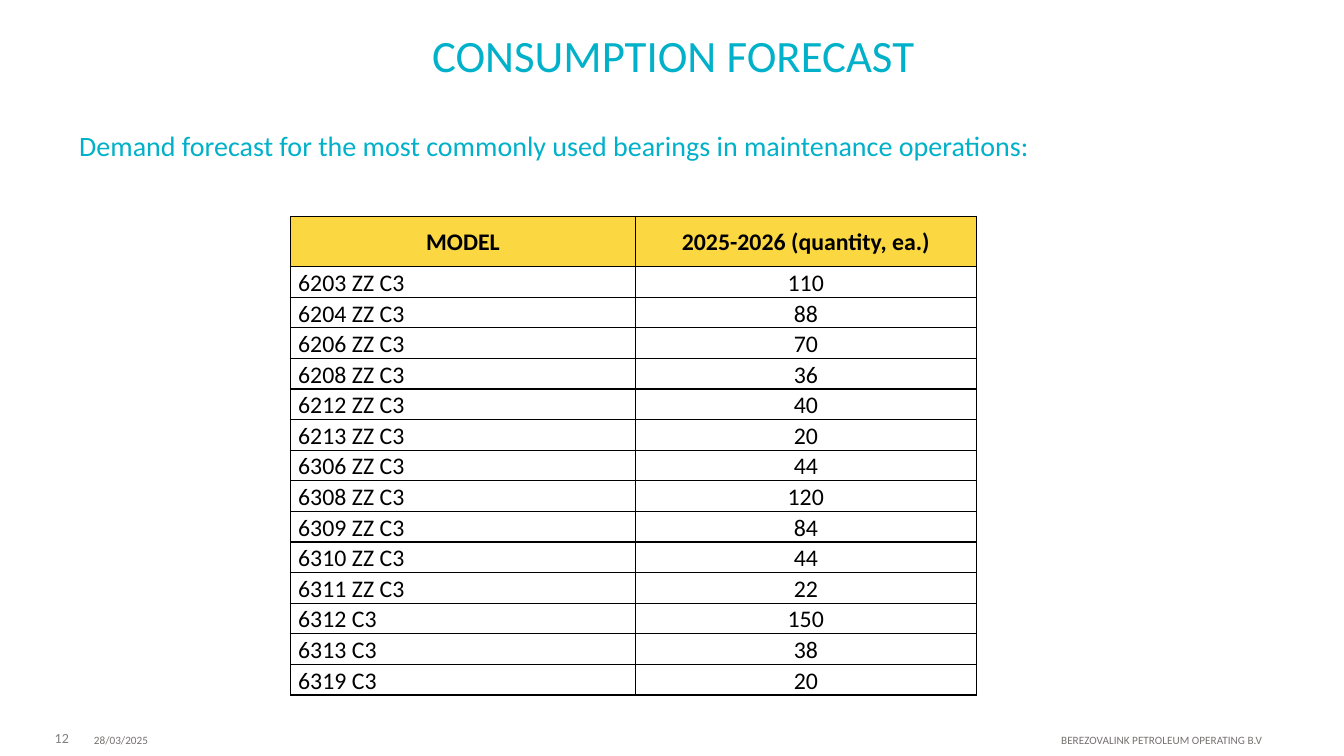
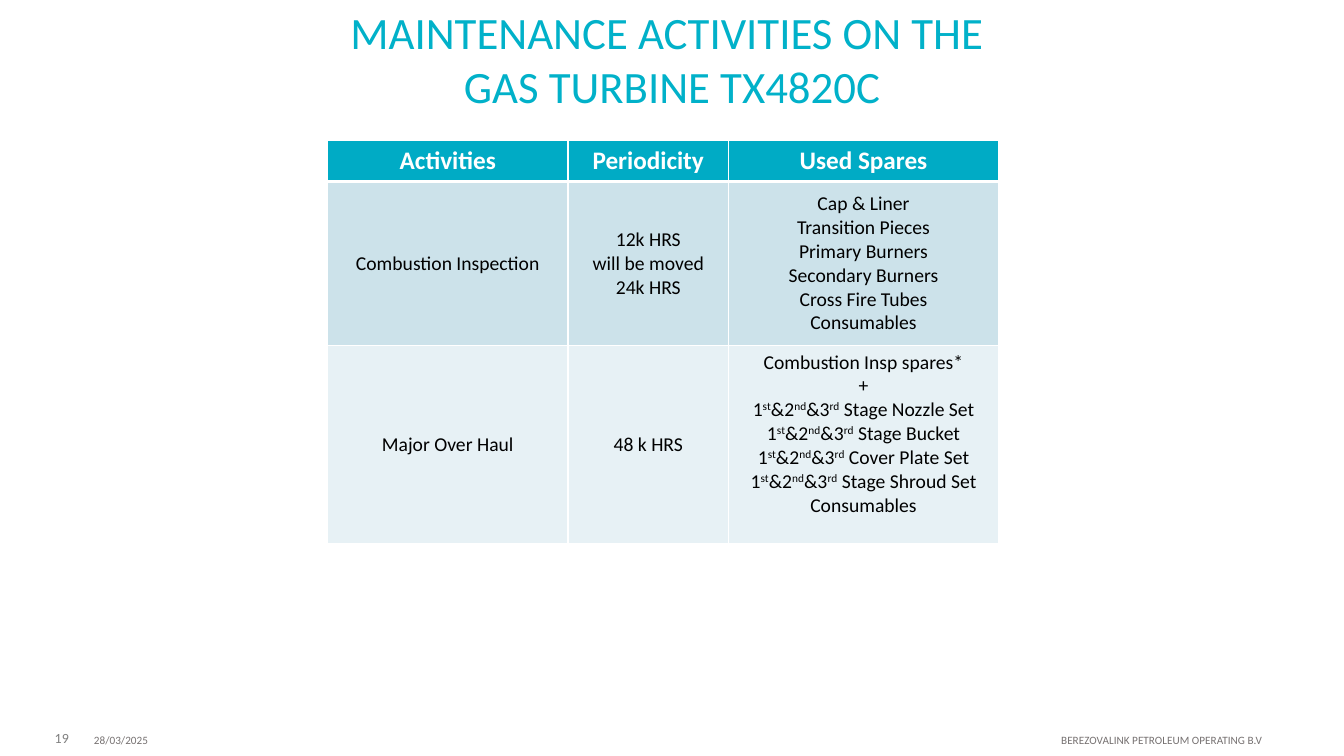
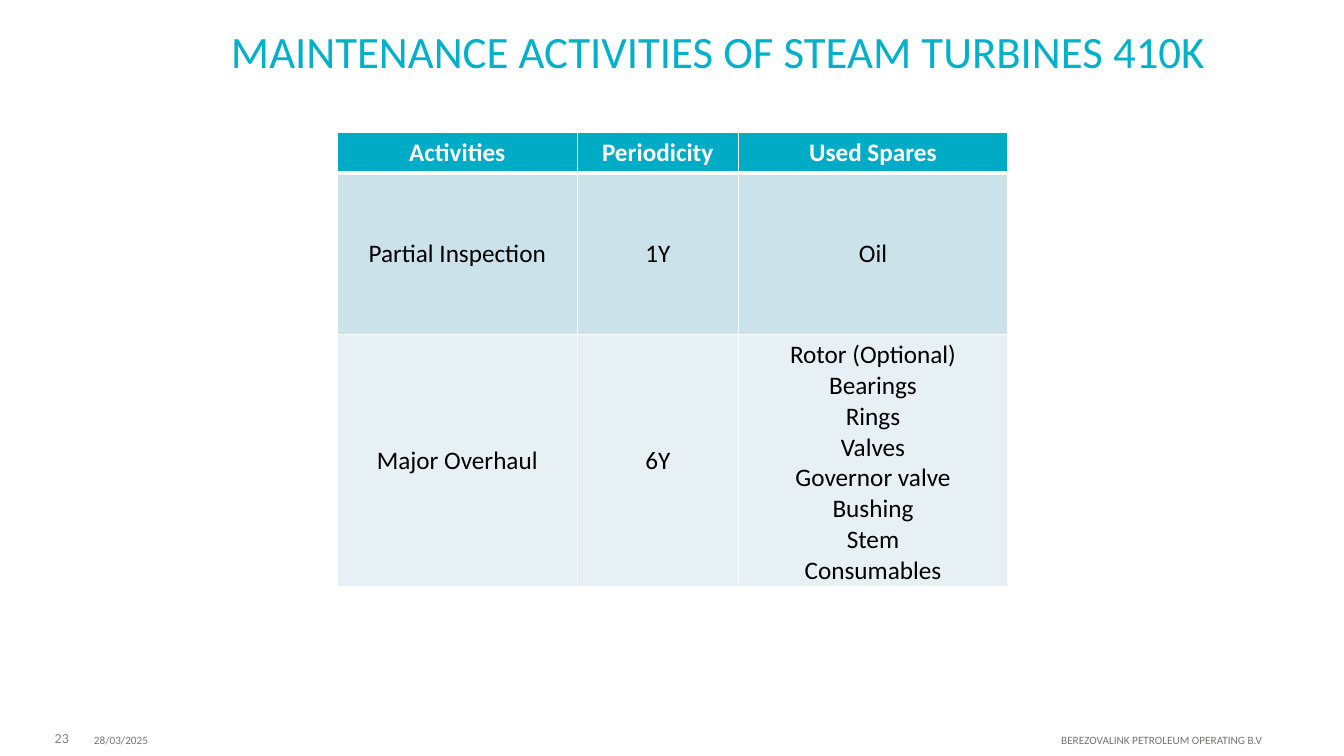
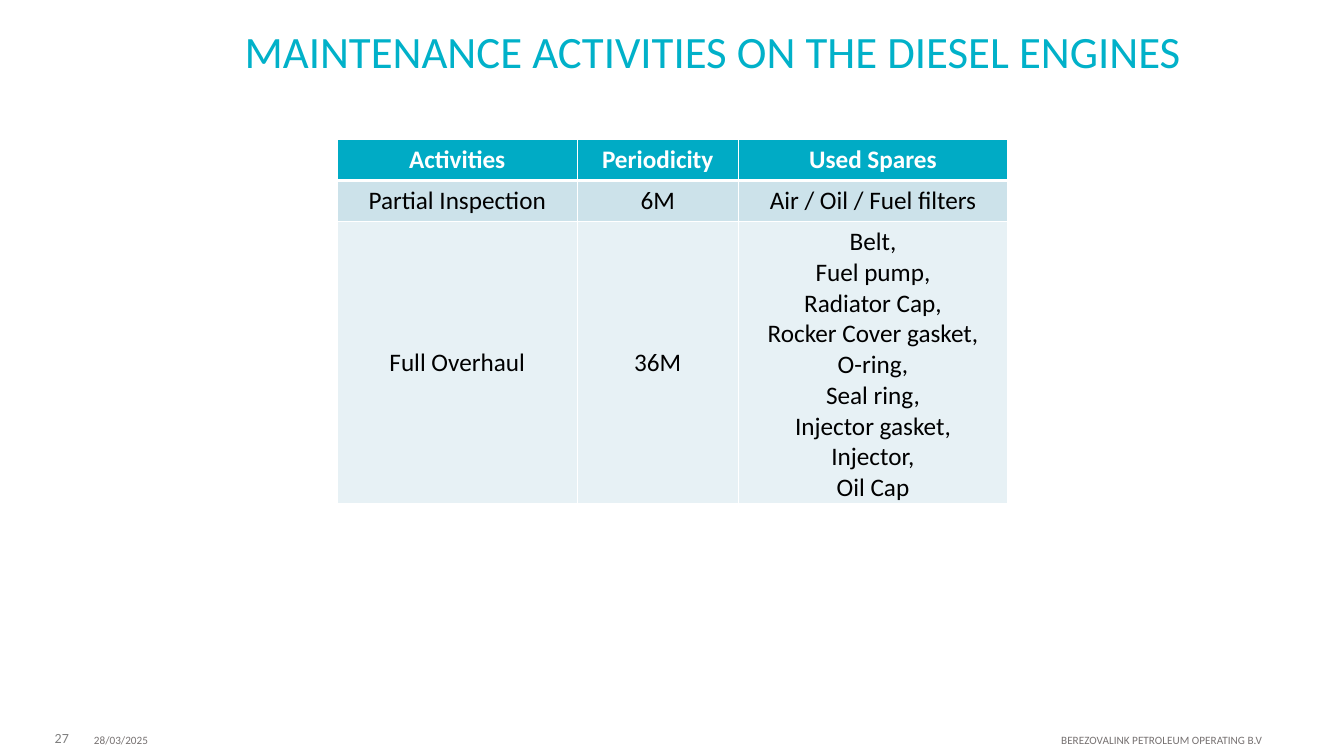
"""Build four slides on bearing demand and turbine and engine maintenance."""
from dataclasses import dataclass

from lxml import etree
from pptx import Presentation
from pptx import util as u
from pptx.dml.color import RGBColor
from pptx.enum import text
from pptx.oxml import ns

PX = 9525
ALIGN, ANCHOR = text.PP_ALIGN, text.MSO_ANCHOR


@dataclass(frozen=True)
class Theme:
    font: str = "Calibri"
    title: str = "01B1C9"
    header: str = "00ABC5"
    bands: tuple = ("CCE2EA", "E7F1F5")
    model_header: str = "FBD741"
    black: str = "000000"
    white: str = "FFFFFF"
    number: str = "808080"
    footer: str = "767171"
    title_pt: int = 32
    lead_pt: int = 20
    table_pt: int = 18
    model_pt: int = 17
    detail_pt: int = 14
    number_pt: int = 10
    footer_pt: int = 8


T = Theme()


def write(tf, lines, size, color, align=ALIGN.CENTER, bold=False, spacing=None, tab=None):
    """Fill a text frame, raising the parts of a line between ^ marks."""
    tf.word_wrap = True
    for i, line in enumerate(lines):
        p = tf.paragraphs[0] if i == 0 else tf.add_paragraph()
        p.alignment = align
        if spacing:
            p.line_spacing = spacing
        if tab:
            tabs = etree.SubElement(p._p.get_or_add_pPr(), ns.qn("a:tabLst"))
            etree.SubElement(tabs, ns.qn("a:tab"), pos=str(tab * PX), algn="r")
        p.font.name = T.font
        p.font.size = u.Pt(size)
        p.font.bold = bold
        p.font.color.rgb = RGBColor.from_string(color)
        for k, part in enumerate(line.split("^")):
            r = p.add_run()
            r.text = part
            if k % 2:
                r._r.get_or_add_rPr().set("baseline", "30000")


def add_table(s, left, top, widths, heights, border, header_rule):
    """Add a table with plain borders and a heavier or equal rule under its header."""
    box = (v * PX for v in (left, top, sum(widths), sum(heights)))
    table = s.shapes.add_table(len(heights), len(widths), *box).table
    table.first_row = table.horz_banding = False
    for column, width in zip(table.columns, widths):
        column.width = width * PX
    for i, (row, height) in enumerate(zip(table.rows, heights)):
        row.height = height * PX
        for cell in row.cells:
            cell.vertical_anchor = ANCHOR.MIDDLE
            for side in "LRTB":
                heavy = (i, side) in ((0, "B"), (1, "T"))
                ln = etree.SubElement(cell._tc.get_or_add_tcPr(), ns.qn("a:ln" + side),
                                      w=str(u.Pt(header_rule if heavy else 1)))
                fill = etree.SubElement(ln, ns.qn("a:solidFill"))
                etree.SubElement(fill, ns.qn("a:srgbClr"), val=border)
    return table


prs = Presentation()
prs.slide_width, prs.slide_height = 1280 * PX, 720 * PX

TITLES = [
    (12, 1, 22, 69, 0, ["CONSUMPTION FORECAST"]),
    (19, 0, 0, 87, 0, ["MAINTENANCE ACTIVITIES ON THE ", "GAS TURBINE TX4820C"]),
    (23, 1, 18, 87, 86, ["MAINTENANCE ACTIVITIES OF STEAM TURBINES 410K"]),
    (27, 1, 18, 72, 76, ["MAINTENANCE ACTIVITIES ON THE DIESEL ENGINES"]),
]
slides = []
for number, left, top, height, indent, title in TITLES:
    s = prs.slides.add_slide(prs.slide_layouts[6])
    slides.append(s)
    tf = s.shapes.add_textbox(11 * PX, 685 * PX, 64 * PX, 35 * PX).text_frame
    tf.vertical_anchor = ANCHOR.MIDDLE
    write(tf, [str(number)], T.number_pt, T.number, ALIGN.RIGHT)
    tf = s.shapes.add_textbox(left * PX, top * PX, 1280 * PX, height * PX).text_frame
    tf.margin_left = (10 + indent) * PX
    write(tf, title, T.title_pt, T.title)
    tf = s.shapes.add_textbox(80 * PX, 694 * PX, 1200 * PX, 27 * PX).text_frame
    write(tf, ["28/03/2025\tBEREZOVALINK PETROLEUM OPERATING B.V"],
          T.footer_pt, T.footer, ALIGN.LEFT, tab=1113)

s = slides[0]
tf = s.shapes.add_textbox(66 * PX, 115 * PX, 1174 * PX, 69 * PX).text_frame
write(tf, ["Demand forecast for the most commonly used bearings in maintenance operations:"],
      T.lead_pt, T.title, ALIGN.JUSTIFY, spacing=1.07)

DEMAND = [
    ("MODEL", "2025-2026 (quantity, ea.)"),
    ("6203 ZZ C3", "110"), ("6204 ZZ C3", "88"), ("6206 ZZ C3", "70"),
    ("6208 ZZ C3", "36"), ("6212 ZZ C3", "40"), ("6213 ZZ C3", "20"),
    ("6306 ZZ C3", "44"), ("6308 ZZ C3", "120"), ("6309 ZZ C3", "84"),
    ("6310 ZZ C3", "44"), ("6311 ZZ C3", "22"), ("6312 C3", "150"),
    ("6313 C3", "38"), ("6319 C3", "20"),
]
heights = [48] + [29] * (len(DEMAND) - 1)
table = add_table(s, 277, 206, (328, 325), heights, T.black, 1)
for i, values in enumerate(DEMAND):
    for j, value in enumerate(values):
        cell = table.cell(i, j)
        cell.margin_left = cell.margin_right = 7 * PX
        cell.margin_top = cell.margin_bottom = 0
        if i == 0:
            cell.fill.solid()
            cell.fill.fore_color.rgb = RGBColor.from_string(T.model_header)
        else:
            cell.vertical_anchor = ANCHOR.TOP
            cell.fill.background()
        align = ALIGN.LEFT if i and j == 0 else ALIGN.CENTER
        write(cell.text_frame, [value], T.model_pt, T.black, align, i == 0, 1.07)

STAGES = "1^st^&2^nd^&3^rd^ "
PLANS = [
    (312, 134, (39, 156, 189), T.detail_pt, [
        (["Combustion Inspection"], ["12k HRS", "will be moved 24k HRS"],
         ["Cap & Liner", "Transition Pieces", "Primary Burners", "Secondary Burners",
          "Cross Fire Tubes", "Consumables"]),
        (["Major Over Haul"], ["48 k HRS"],
         ["Combustion Insp spares*", "+"]
         + [STAGES + part for part in ("Stage Nozzle Set", "Stage Bucket",
                                       "Cover Plate Set", "Stage Shroud Set")]
         + ["Consumables"]),
    ]),
    (321, 126, (39, 154, 240), T.table_pt, [
        (["Partial Inspection"], ["1Y"], ["Oil"]),
        (["Major Overhaul"], ["6Y"],
         ["Rotor (Optional)", "Bearings", "Rings", "Valves", "Governor valve",
          "Bushing", "Stem", "Consumables"]),
    ]),
    (321, 133, (39, 39, 268), T.table_pt, [
        (["Partial Inspection"], ["6M"], ["Air / Oil / Fuel filters"]),
        (["Full Overhaul"], ["36M"],
         ["Belt,", "Fuel pump,", "Radiator Cap,", "Rocker Cover gasket,", "O-ring,",
          "Seal ring,", "Injector gasket,", "Injector,", "Oil Cap"]),
    ]),
]
HEADER = (["Activities"], ["Periodicity"], ["Used Spares"])
tables = []
for s, (left, top, heights, size, body) in zip(slides[1:], PLANS):
    table = add_table(s, left, top, (229, 153, 257), heights, T.white, 3)
    tables.append(table)
    for i, (values, fill) in enumerate(zip([HEADER] + body, (T.header,) + T.bands)):
        for j, lines in enumerate(values):
            cell = table.cell(i, j)
            cell.fill.solid()
            cell.fill.fore_color.rgb = RGBColor.from_string(fill)
            if i == 0:
                write(cell.text_frame, lines, T.table_pt, T.white, bold=True)
            else:
                write(cell.text_frame, lines, size, T.black)
tables[0].cell(2, 2).margin_bottom = 26 * PX

prs.save("out.pptx")
